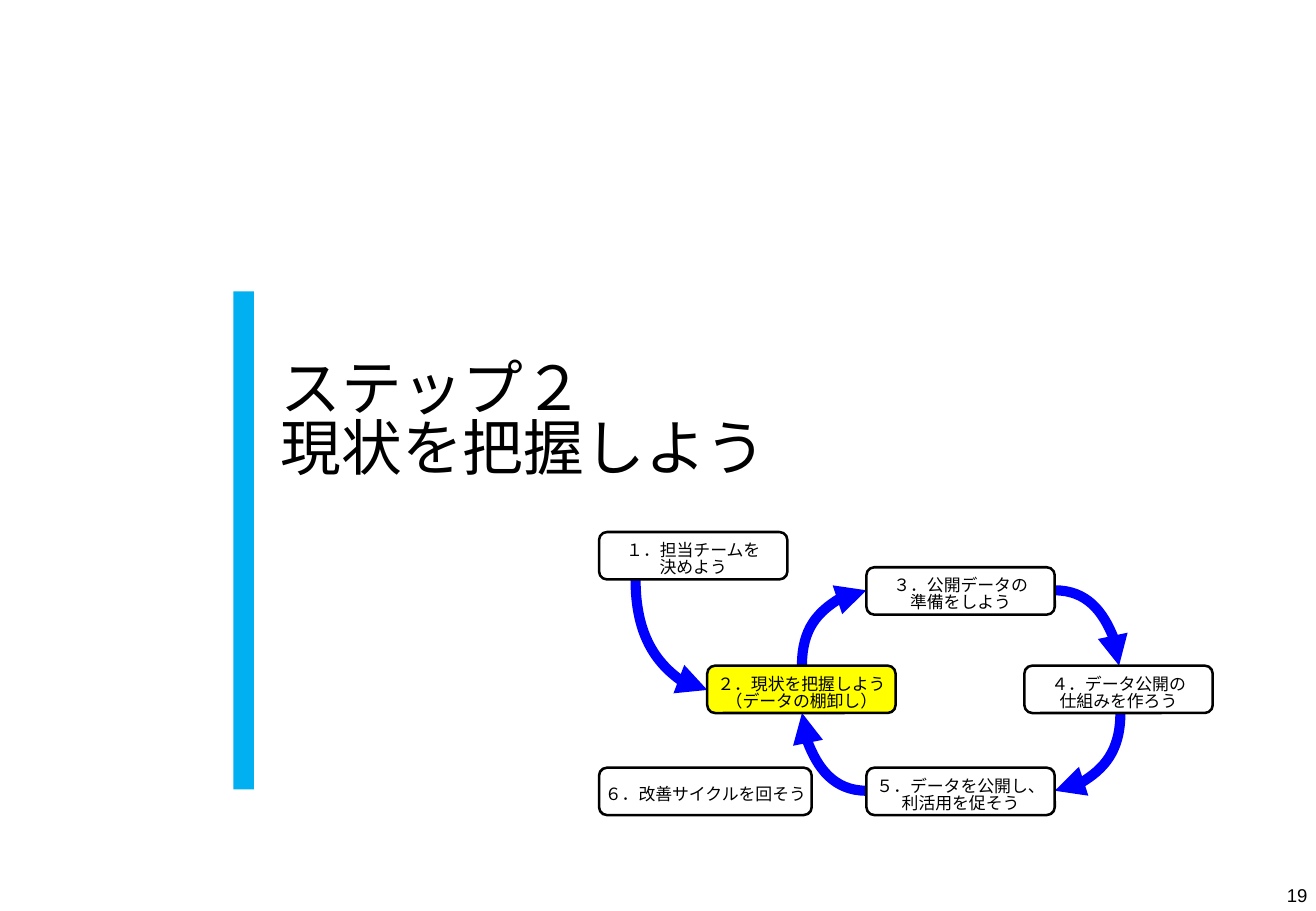
from math import cos, radians, sin

from lxml import etree
from pptx import Presentation
from pptx.dml.color import RGBColor
from pptx.enum.shapes import MSO_CONNECTOR, MSO_SHAPE
from pptx.enum.text import MSO_ANCHOR, PP_ALIGN
from pptx.oxml.ns import qn
from pptx.util import Inches, Pt

CURVE = MSO_CONNECTOR.CURVE
RECTANGLE, ROUNDED = MSO_SHAPE.RECTANGLE, MSO_SHAPE.ROUNDED_RECTANGLE
MIDDLE, BOTTOM = MSO_ANCHOR.MIDDLE, MSO_ANCHOR.BOTTOM
CENTER, RIGHT = PP_ALIGN.CENTER, PP_ALIGN.RIGHT
JAPANESE, LATIN = "Noto Sans CJK JP", "Arial"
COLORS = {name: RGBColor.from_string(value) for name, value in {
    "bar": "00B0F0", "arrow": "0000FF", "current": "FFFF00",
    "white": "FFFFFF", "black": "000000"}.items()}
LINE_SPACING = 0.83


def set_frame(frame, anchor, margins, wrap):
    frame.word_wrap = wrap
    frame.vertical_anchor = anchor
    (frame.margin_left, frame.margin_top,
     frame.margin_right, frame.margin_bottom) = [Inches(m) for m in margins]


def add_span(para, text, size, font):
    span = para.add_run()
    span.text = text
    span.font.size = Pt(size)
    span.font.name = font
    span.font.color.rgb = COLORS["black"]
    etree.SubElement(span.font._element, qn("a:ea"), typeface=font)


deck = Presentation()
deck.slide_width, deck.slide_height = Inches(10.83), Inches(7.5)
page = deck.slides.add_slide(deck.slide_layouts[6])

# Accent bar
bar = page.shapes.add_shape(
    RECTANGLE, Inches(1.92), Inches(2.4), Inches(0.17), Inches(4.1))
bar.shadow.inherit = False
bar.fill.solid()
bar.fill.fore_color.rgb = COLORS["bar"]
bar.line.fill.background()

# Title
title = page.shapes.add_textbox(
    Inches(2.31), Inches(2.43), Inches(7.75), Inches(2.09))
set_frame(title.text_frame, MIDDLE, (0, 0, 0, 0), True)
para = title.text_frame.paragraphs[0]
para.line_spacing = LINE_SPACING
add_span(para, "ステップ２", 36, JAPANESE)
para.add_line_break()
add_span(para, "現状を把握しよう", 36, JAPANESE)

# Page number
number = page.shapes.add_textbox(
    Inches(10.39), Inches(7.22), Inches(0.44), Inches(0.28))
set_frame(number.text_frame, BOTTOM, (0.07, 0.04, 0.07, 0.04), True)
para = number.text_frame.paragraphs[0]
para.alignment = RIGHT
add_span(para, "19", 11, LATIN)

# Cycle arrows: start, end, and the turn that sets the starting direction
arrows = [
    ((5.23, 4.77), (5.82, 5.68), 270),
    ((6.6, 5.48), (7.13, 4.86), 90),
    ((7.13, 6.51), (6.6, 5.87), 180),
    ((8.68, 4.86), (9.21, 5.48), 0),
    ((9.22, 5.87), (8.68, 6.51), 90),
]
for (x1, y1), (x2, y2), turn in arrows:
    # Turn the end points back about their middle, then rotate the connector
    middle_x, middle_y = (x1 + x2) / 2, (y1 + y2) / 2
    cosine, sine = cos(radians(turn)), sin(radians(turn))
    half_x = ((x2 - x1) * cosine + (y2 - y1) * sine) / 2
    half_y = ((y2 - y1) * cosine - (x2 - x1) * sine) / 2
    arrow = page.shapes.add_connector(
        CURVE, Inches(middle_x - half_x), Inches(middle_y - half_y),
        Inches(middle_x + half_x), Inches(middle_y + half_y))
    arrow.line.color.rgb = COLORS["arrow"]
    arrow.line.width = Pt(6)
    properties = arrow._element.spPr
    properties.find(qn("a:xfrm")).set("rot", str(turn * 60000))
    properties.find(qn("a:prstGeom")).set("prst", "curvedConnector2")
    etree.SubElement(properties.find(qn("a:ln")), qn("a:tailEnd"), type="triangle")
    etree.SubElement(properties, qn("a:effectLst"))

# Step boxes: left, top, width, fill, lines
steps = [
    (4.93, 4.38, 1.55, "white", ["１．担当チームを", "決めよう"]),
    (5.82, 5.48, 1.55, "current", ["２．現状を把握しよう", "（データの棚卸し）"]),
    (7.13, 4.67, 1.55, "white", ["３．公開データの", "準備をしよう"]),
    (8.43, 5.48, 1.55, "white", ["４．データ公開の", "仕組みを作ろう"]),
    (7.13, 6.32, 1.55, "white", ["５．データを公開し、", "利活用を促そう"]),
    (4.93, 6.32, 1.75, "white", ["６．改善サイクルを回そう"]),
]
for left, top, width, fill, lines in steps:
    box = page.shapes.add_shape(
        ROUNDED, Inches(left), Inches(top), Inches(width), Inches(0.39))
    box.shadow.inherit = False
    box.fill.solid()
    box.fill.fore_color.rgb = COLORS[fill]
    box.line.color.rgb = COLORS["black"]
    box.line.width = Pt(1.5)
    frame = box.text_frame
    set_frame(frame, MIDDLE, (0.1, 0.12, 0.1, 0.05), False)
    for index, line in enumerate(lines):
        para = frame.add_paragraph() if index else frame.paragraphs[0]
        para.alignment = CENTER
        para.line_spacing = LINE_SPACING
        add_span(para, line, 10, JAPANESE)

deck.save("out.pptx")
